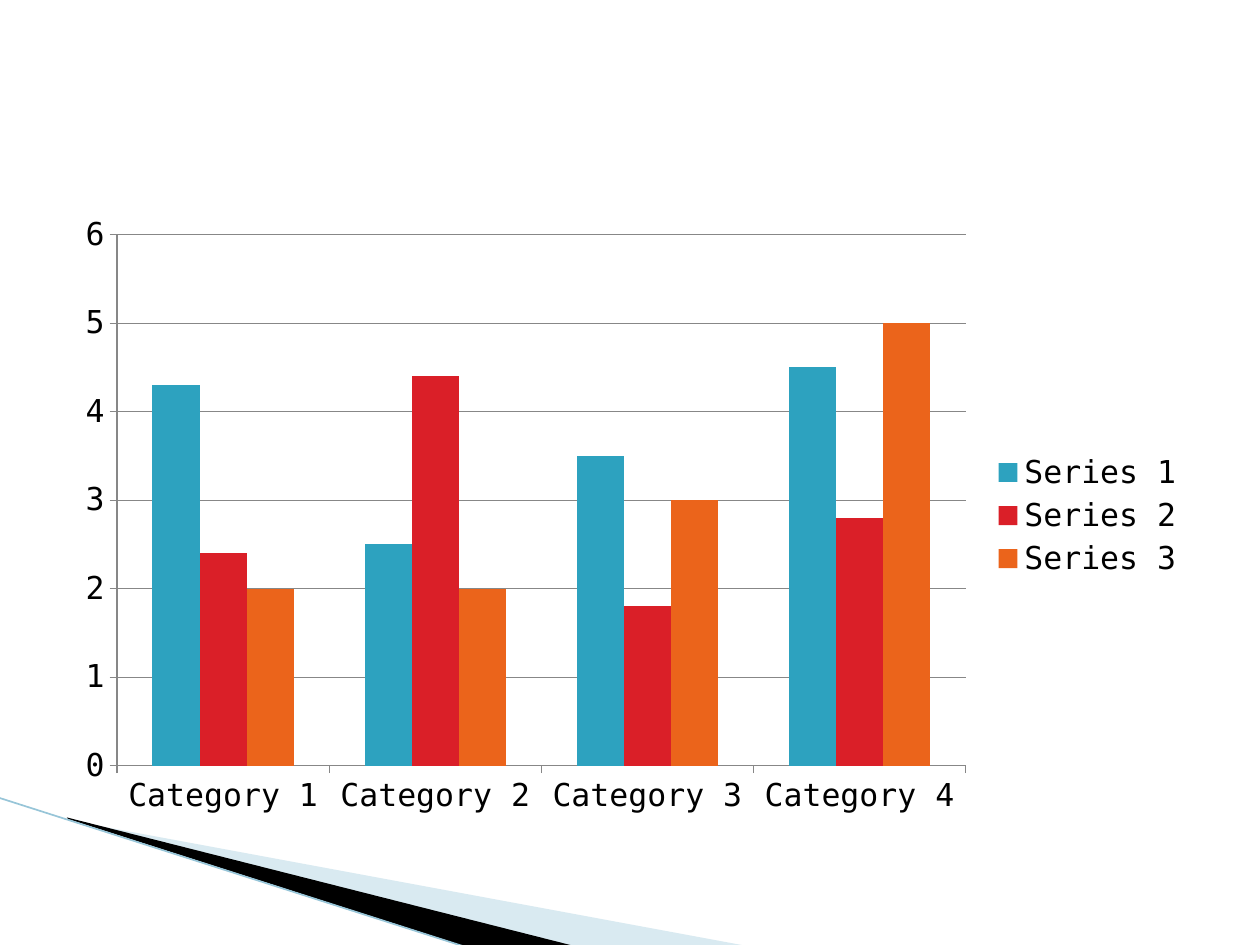
from lxml import etree
from pptx import Presentation
from pptx.chart.data import CategoryChartData
from pptx.dml.color import RGBColor
from pptx.enum.chart import XL_CHART_TYPE, XL_LEGEND_POSITION, XL_TICK_MARK
from pptx.enum.shapes import MSO_CONNECTOR
from pptx.oxml.ns import qn
from pptx.util import Cm, Pt

COLUMNS = XL_CHART_TYPE.COLUMN_CLUSTERED
RIGHT = XL_LEGEND_POSITION.RIGHT
OUTSIDE = XL_TICK_MARK.OUTSIDE
STRAIGHT = MSO_CONNECTOR.STRAIGHT

FONT = "DejaVu Sans Mono"
AXIS_GREY = "878787"
CATEGORIES = ["Category 1", "Category 2", "Category 3", "Category 4"]
SERIES = [
    ("Series 1", (4.3, 2.5, 3.5, 4.5), "2DA2BF"),
    ("Series 2", (2.4, 4.4, 1.8, 2.8), "DA1F28"),
    ("Series 3", (2, 2, 3, 5), "EB641B"),
]
PALE_WEDGE = [(1.4, 16.54), (15.11, 19.08), (11.58, 19.08), (1.4, 16.51)]
BLACK_WEDGE = [(1.35, 16.48), (11.61, 19.08), (9.45, 19.1), (1.37, 16.51)]


def rgb(color):
    return RGBColor.from_string(color)


def add_wedge(s, points, color, opacity=100):
    """Draw a closed, unlined polygon; points are in cm, opacity in percent."""
    corners = [(Cm(x), Cm(y)) for x, y in points]
    builder = s.shapes.build_freeform(*corners[0])
    builder.add_line_segments(corners[1:], close=True)
    wedge = builder.convert_to_shape()
    wedge.shadow.inherit = False
    wedge.line.fill.background()
    wedge.fill.solid()
    wedge.fill.fore_color.rgb = rgb(color)
    if opacity < 100:
        clr = wedge.fill._xPr.find(".//" + qn("a:srgbClr"))
        etree.SubElement(clr, qn("a:alpha"), val=str(opacity * 1000))


def add_line(s, start, end, color, width):
    line = s.shapes.add_connector(STRAIGHT, *(Cm(v) for v in start + end))
    line.line.color.rgb = rgb(color)
    line.line.width = Pt(width)
    etree.SubElement(line._element.spPr, qn("a:effectLst"))


def format_line(line):
    line.color.rgb = rgb(AXIS_GREY)
    line.width = Pt(0.75)


def add_column_chart(s, left, top, width, height):
    data = CategoryChartData()
    data.categories = CATEGORIES
    for name, values, _ in SERIES:
        data.add_series(name, values)
    chart = s.shapes.add_chart(
        COLUMNS, Cm(left), Cm(top), Cm(width), Cm(height), data).chart
    chart.has_title = False
    chart.font.name = FONT
    chart.font.size = Pt(18)
    chart.font.color.rgb = rgb("000000")

    chart.has_legend = True
    chart.legend.position = RIGHT
    chart.legend.include_in_layout = False

    for axis in (chart.category_axis, chart.value_axis):
        axis.major_tick_mark = OUTSIDE
        format_line(axis.format.line)
    axis = chart.value_axis
    axis.minimum_scale, axis.maximum_scale, axis.major_unit = 0, 6, 1
    axis.has_major_gridlines = True
    format_line(axis.major_gridlines.format.line)

    plot = chart.plots[0]
    plot.vary_by_categories = False
    plot.gap_width = 150
    for series, (_, _, color) in zip(plot.series, SERIES):
        series.format.fill.solid()
        series.format.fill.fore_color.rgb = rgb(color)


def main():
    prs = Presentation()
    prs.slide_width, prs.slide_height = Cm(25.4), Cm(19.05)
    s = prs.slides.add_slide(prs.slide_layouts[6])
    add_wedge(s, PALE_WEDGE, "A0CBDC", opacity=40)
    add_wedge(s, BLACK_WEDGE, "000000")
    add_line(s, (-0.03, 16.08), (9.42, 19.1), "97C5D8", 0.95)
    add_column_chart(s, 1.27, 4.11, 22.86, 12.57)
    prs.save("out.pptx")


if __name__ == "__main__":
    main()
